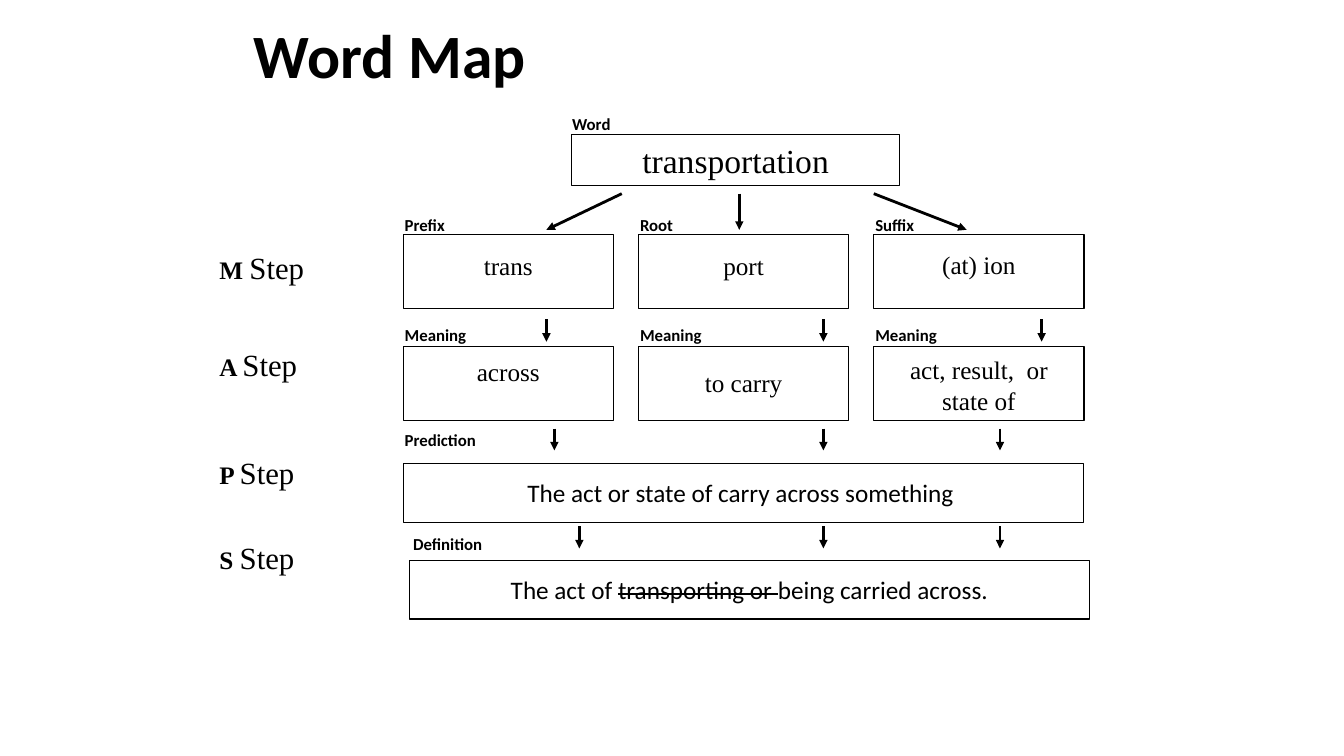
import pptx
import pptx.util
import pptx.dml.color
import pptx.enum.shapes
import pptx.enum.text
import pptx.oxml.ns
from lxml import etree

Cm, Pt = pptx.util.Cm, pptx.util.Pt
SHAPE = pptx.enum.shapes.MSO_SHAPE
ANCHOR = pptx.enum.text.MSO_ANCHOR
ALIGN = pptx.enum.text.PP_ALIGN
qn = pptx.oxml.ns.qn

BLACK = pptx.dml.color.RGBColor(0, 0, 0)
SANS, SERIF = "Calibri", "Times New Roman"

# Lengths are centimetres.
TITLE = "Word Map"
WORD = "transportation"
# Each part: caption, text, space above the text
PART_ROWS = [
    (5.28, 5.92, [("Prefix", "trans", 0.38), ("Root", "port", 0.38),
                  ("Suffix", "(at) ion", 0.36)]),
    (8.05, 8.74, [("Meaning", "across", 0.25), ("Meaning", "to carry", 0.51),
                  ("Meaning", "act, result,  or state of", 0.2)]),
]
PREDICTION = "The act or state of carry across something "
DEFINITION = [("The act of ", False), ("transporting or ", True),
              ("being carried across.", False)]
STEPS = [("M", 6.15), ("A", 8.59), ("P", 11.3), ("S", 13.44)]

GRID_LEFT, COLUMN_PITCH = 10.16, 5.93
PART_SIZE = (5.3, 1.85)
WIDE_SIZE = (17.15, 1.48)
CAPTION_SHIFT = 0.21
# Each row: start height, end height, (start, end) across
ARROW_ROWS = [
    (4.88, 5.79, [(15.67, 13.77), (18.63, 18.63), (22.02, 24.36)]),
    (8.05, 8.61, [(x, x) for x in (13.77, 20.75, 26.25)]),
    (10.8, 11.35, [(x, x) for x in (13.97, 20.75, 25.2)]),
    (13.26, 13.82, [(x, x) for x in (14.6, 20.75, 25.2)]),
]

deck = pptx.Presentation()
deck.slide_width, deck.slide_height = Cm(33.87), Cm(19.05)
page = deck.slides.add_slide(deck.slide_layouts[6])


def add_span(para, text, size, face, bold=False):
    span = para.add_run()
    span.text = text
    span.font.size = Pt(size)
    span.font.name = face
    span.font.bold = bold
    span.font.color.rgb = BLACK
    return span


def add_label(left, top, width, height, spans, spacing=1.0, anchor=ANCHOR.TOP):
    box = page.shapes.add_textbox(Cm(left), Cm(top), Cm(width), Cm(height))
    box.text_frame.word_wrap = True
    box.text_frame.vertical_anchor = anchor
    para = box.text_frame.paragraphs[0]
    para.line_spacing = spacing
    for span in spans:
        add_span(para, *span)


def add_caption(left, top, text, spacing=1.0):
    add_label(left, top, 2.75, 0.74, [(text, 12, SANS, True)], spacing)


def add_box(left, top, size, spans, space_above=None):
    """Outlined box; its text is centred vertically unless space_above is given."""
    box = page.shapes.add_shape(SHAPE.RECTANGLE, Cm(left), Cm(top), *map(Cm, size))
    box.shadow.inherit = False
    box.fill.background()
    box.line.color.rgb = BLACK
    box.line.width = Pt(0.75)
    frame = box.text_frame
    frame.word_wrap = True
    frame.margin_left = frame.margin_right = Cm(0.45)
    frame.vertical_anchor = ANCHOR.MIDDLE
    if space_above is not None:
        frame.vertical_anchor = ANCHOR.TOP
        frame.margin_top = Cm(space_above)
        frame.margin_bottom = 0
    para = frame.paragraphs[0]
    para.alignment = ALIGN.CENTER
    for span in spans:
        add_span(para, *span)
    return box


def add_arrow(x1, y1, x2, y2):
    arrow = page.shapes.add_connector(
        pptx.enum.shapes.MSO_CONNECTOR.STRAIGHT, Cm(x1), Cm(y1), Cm(x2), Cm(y2))
    arrow.line.color.rgb = BLACK
    arrow.line.width = Pt(2)
    properties = arrow.element.spPr
    etree.SubElement(properties.find(qn("a:ln")), qn("a:tailEnd"), type="triangle")
    etree.SubElement(properties, qn("a:effectLst"))


add_label(6.15, 0.43, 21.39, 2.11, [(TITLE, 44, SANS, True)], 0.9, ANCHOR.MIDDLE)

add_caption(14.17, 2.74, "Word")
add_box(14.4, 3.38, (8.28, 1.3), [(WORD, 24, SERIF)])

for caption_top, box_top, parts in PART_ROWS:
    for column, (caption, text, space_above) in enumerate(parts):
        left = GRID_LEFT + column * COLUMN_PITCH
        add_caption(left - CAPTION_SHIFT, caption_top, caption)
        add_box(left, box_top, PART_SIZE, [(text, 18, SERIF)], space_above)

add_caption(GRID_LEFT - CAPTION_SHIFT, 10.8, "Prediction", 0.8)
add_box(GRID_LEFT, 11.68, WIDE_SIZE, [(PREDICTION, 18, SANS)])

add_caption(GRID_LEFT, 13.39, "Definition", 0.9)
definition = add_box(10.31, 14.12, WIDE_SIZE,
                     [(text, 18, SANS) for text, struck in DEFINITION])
for (text, struck), style in zip(DEFINITION, definition.element.iter(qn("a:rPr"))):
    if struck:
        style.set("strike", "sngStrike")

for letter, top in STEPS:
    add_label(5.28, top, 4.65, 1.15,
              [(letter + " ", 18, SERIF, True), ("Step", 22, SERIF)])

for start, end, arrows in ARROW_ROWS:
    for x1, x2 in arrows:
        add_arrow(x1, start, x2, end)

deck.save("out.pptx")
